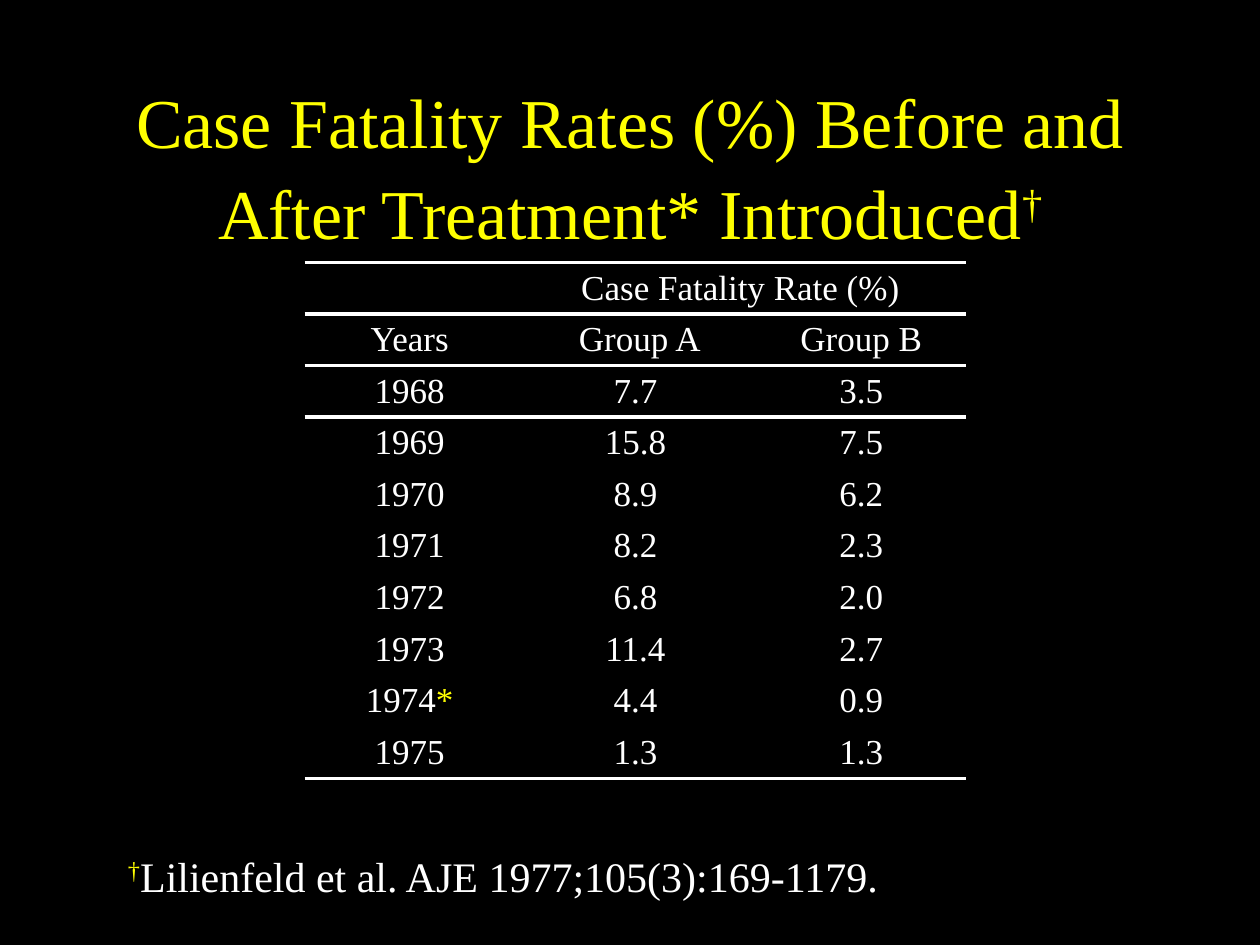
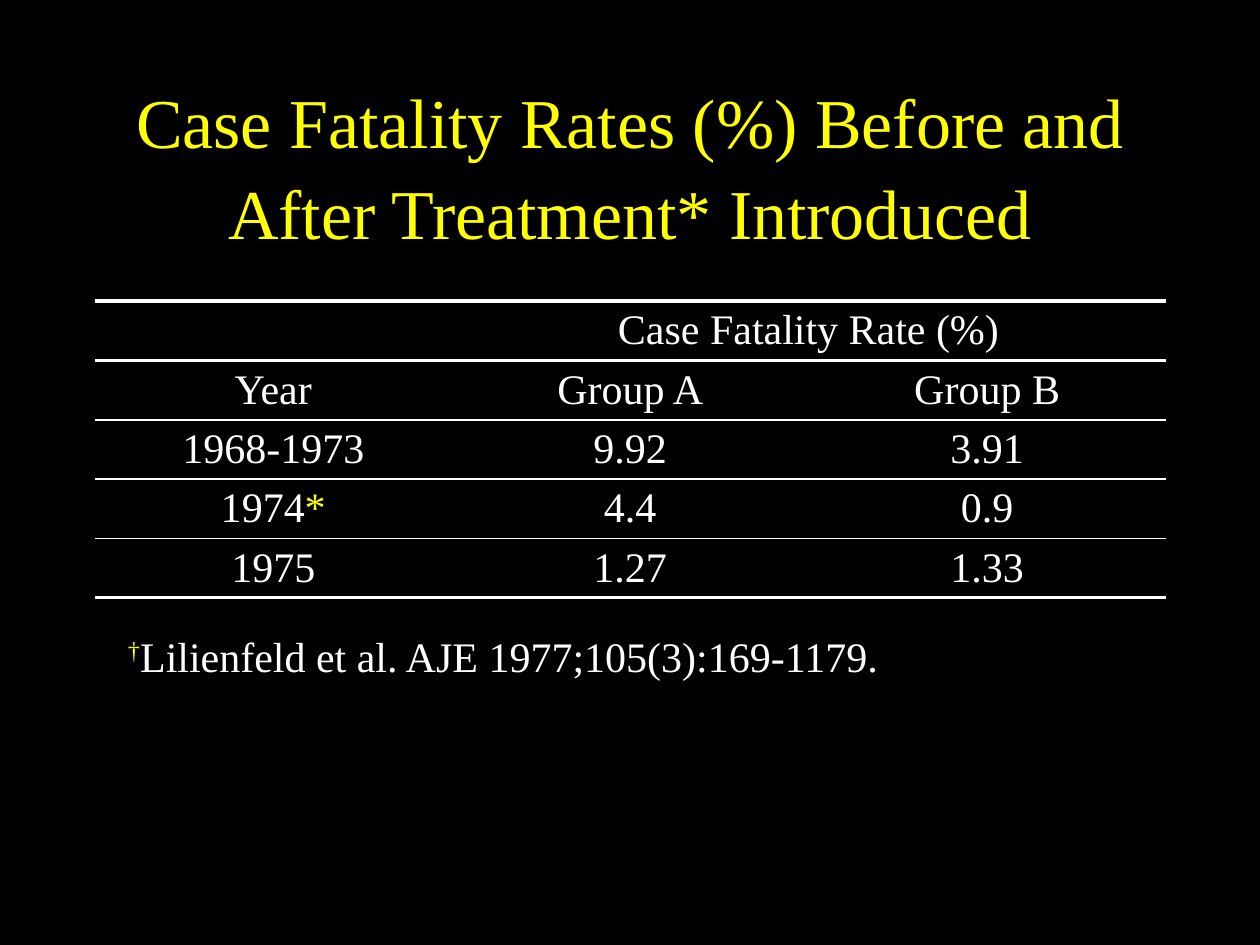
import lxml.etree
import pptx
import pptx.dml.color
import pptx.enum.text
import pptx.oxml.ns
import pptx.util

Cm = pptx.util.Cm
Pt = pptx.util.Pt
CENTER = pptx.enum.text.PP_ALIGN.CENTER
LEFT = pptx.enum.text.PP_ALIGN.LEFT

# Shared style
FONT = "Times New Roman"
BLACK, WHITE, YELLOW = "000000", "FFFFFF", "FFFF00"
LINE_SPACING = 1.08
NO_GRID_STYLE = "{2D5ABB26-0587-4C30-8999-92F81FD0307C}"
TITLE_BOX = (1.91, 1.69, 21.59, 3.18)
TITLE = "Case Fatality Rates (%) Before and After Treatment* Introduced"
CITATION = "Lilienfeld et al. AJE 1977;105(3):169-1179."
RATE_HEADING = "Case Fatality Rate (%)"

# Table contents
YEARLY_RATES = [
    ("", RATE_HEADING, ""),
    ("Years", " Group A", "Group B"),
    ("1968", "7.7", "3.5"),
    ("1969", "15.8", "7.5"),
    ("1970", "8.9", "6.2"),
    ("1971", "8.2", "2.3"),
    ("1972", "6.8", "2.0"),
    ("1973", "11.4", "2.7"),
    ("1974*", "4.4", "0.9"),
    ("1975", "1.3", "1.3"),
]
PERIOD_RATES = [
    ("", RATE_HEADING, ""),
    ("Year", "Group A", "Group B"),
    ("1968-1973", "9.92", "3.91"),
    ("1974*", "4.4", "0.9"),
    ("1975", "1.27", "1.33"),
]


def color(hex_string):
    return pptx.dml.color.RGBColor.from_string(hex_string)


def add_run(paragraph, text, size, hex_string, raised=False):
    run = paragraph.add_run()
    run.text = text
    run.font.name = FONT
    run.font.size = Pt(size)
    run.font.color.rgb = color(hex_string)
    if raised:
        run._r.get_or_add_rPr().set("baseline", "30000")


def place(shape, box):
    shape.left, shape.top, shape.width, shape.height = map(Cm, box)


def add_title(slide, box, dagger):
    title = slide.shapes.title
    place(title, box)
    frame = title.text_frame
    frame.word_wrap = True
    frame.auto_size = pptx.enum.text.MSO_AUTO_SIZE.NONE
    frame.vertical_anchor = pptx.enum.text.MSO_ANCHOR.MIDDLE
    paragraph = frame.paragraphs[0]
    paragraph.alignment = CENTER
    paragraph.line_spacing = LINE_SPACING
    add_run(paragraph, TITLE, 40, YELLOW)
    if dagger:
        add_run(paragraph, "†", 40, YELLOW, raised=True)


def add_citation(slide, box):
    frame = slide.shapes.add_textbox(*map(Cm, box)).text_frame
    frame.word_wrap = True
    paragraph = frame.paragraphs[0]
    paragraph.alignment = LEFT
    paragraph.line_spacing = LINE_SPACING
    add_run(paragraph, "†", 24, YELLOW, raised=True)
    add_run(paragraph, CITATION, 24, WHITE)


def set_border(cell, tag, width):
    properties = cell._tc.get_or_add_tcPr()
    qn = pptx.oxml.ns.qn
    line = lxml.etree.SubElement(properties, qn(tag), w=str(Pt(width)))
    fill = lxml.etree.SubElement(line, qn("a:solidFill"))
    lxml.etree.SubElement(fill, qn("a:srgbClr"), val=WHITE)


def add_rate_table(slide, box, rows, column_shares, size, rules):
    """Rules map a row boundary (0 is the top edge) to its line width."""
    left, top, width, height = box
    frame = slide.shapes.add_table(len(rows), len(rows[0]), *map(Cm, box))
    table = frame.table
    table.first_row = table.horz_banding = False
    table._tbl.tblPr.find(pptx.oxml.ns.qn("a:tableStyleId")).text = NO_GRID_STYLE
    for column, share in zip(table.columns, column_shares):
        column.width = Cm(width * share / sum(column_shares))
    for row in table.rows:
        row.height = Cm(height / len(rows))
    table.cell(0, 1).merge(table.cell(0, 2))

    for row_index, row_texts in enumerate(rows):
        for column_index, text in enumerate(row_texts):
            cell = table.cell(row_index, column_index)
            for tag, boundary in (("a:lnT", row_index), ("a:lnB", row_index + 1)):
                if boundary in rules:
                    set_border(cell, tag, rules[boundary])
            cell.fill.background()
            paragraph = cell.text_frame.paragraphs[0]
            paragraph.alignment = CENTER
            if text:
                add_run(paragraph, text.rstrip("*"), size, WHITE)
            if text.endswith("*"):
                add_run(paragraph, "*", size, YELLOW)


def add_rate_slide(presentation, dagger, citation_box, **table_options):
    slide = presentation.slides.add_slide(presentation.slide_layouts[5])
    add_title(slide, TITLE_BOX, dagger)
    add_rate_table(slide, **table_options)
    add_citation(slide, citation_box)


def main():
    presentation = pptx.Presentation()
    presentation.slide_width, presentation.slide_height = Cm(25.4), Cm(19.05)
    background = presentation.slide_master.background.fill
    background.solid()
    background.fore_color.rgb = color(BLACK)

    # Rates year by year
    add_rate_slide(
        presentation, dagger=True, citation_box=(2.33, 16.93, 16.51, 1.27),
        box=(6.14, 5.29, 13.34, 10.4), rows=YEARLY_RATES,
        column_shares=(1.67, 1.92, 1.67), size=20,
        rules={0: 2.25, 1: 2.25, 2: 2.25, len(YEARLY_RATES): 2.25})

    # Rates before and after treatment
    add_rate_slide(
        presentation, dagger=False, citation_box=(2.33, 12.5, 19.47, 2.31),
        box=(1.91, 6.07, 21.59, 5.98), rows=PERIOD_RATES,
        column_shares=(1, 1, 1), size=24,
        rules={0: 2.25, 1: 2.25, 2: 1, 3: 1, len(PERIOD_RATES): 2.25})

    presentation.save("out.pptx")


if __name__ == "__main__":
    main()
